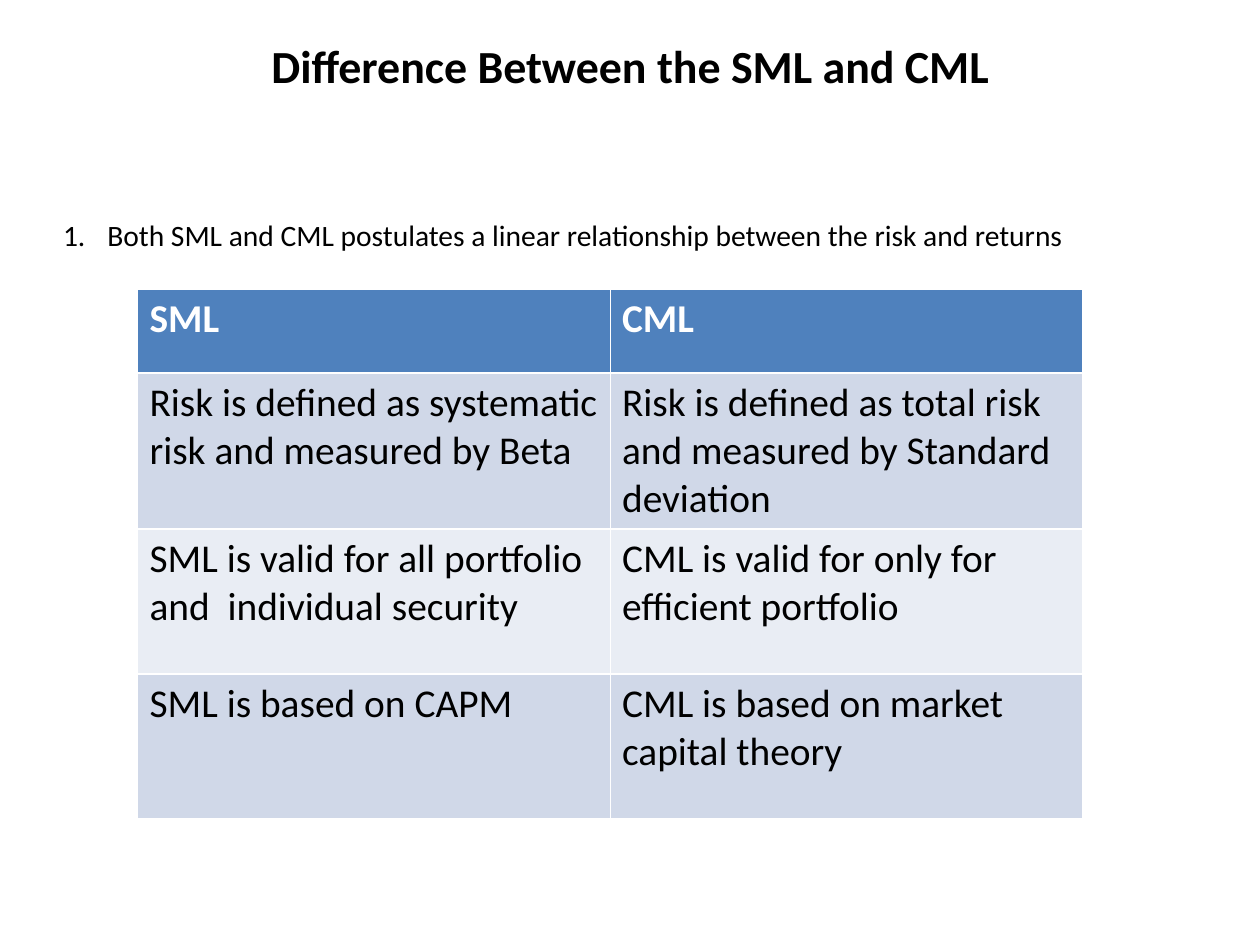
from pptx import Presentation
from pptx.dml.color import RGBColor as RGB
from pptx.enum.text import MSO_ANCHOR as Anchor, MSO_AUTO_SIZE as Auto, PP_ALIGN as Align
from pptx.oxml.ns import qn
from pptx.util import Pt
from lxml.etree import SubElement

HUES = {"text": "000000", "head": "4F81BD", "light": "FFFFFF",
        "odd": "D0D8E8", "even": "E9EDF4"}

ROWS = [
    ("SML", "CML"),
    ("Risk is defined as systematic risk and measured by Beta",
     "Risk is defined as total risk and measured by Standard deviation"),
    ("SML is valid for all portfolio and  individual security",
     "CML is valid for only for efficient portfolio"),
    ("SML is based on CAPM", "CML is based on market capital theory"),
]


def apply(item, form):
    for name, value in form.items():
        setattr(item, name, value)


class Deck:
    """Holds the style and the current slide."""

    face = "Calibri"
    frame = {"margin_left": 0, "margin_top": 0, "margin_right": 0, "margin_bottom": 0,
             "word_wrap": True, "auto_size": Auto.NONE, "vertical_anchor": Anchor.TOP}

    def __init__(self, wide, high):
        self.show = Presentation()
        apply(self.show, {"slide_width": Pt(wide), "slide_height": Pt(high)})
        self.slide = self.show.slides.add_slide(self.show.slide_layouts[1])

    def color(self, key):
        return RGB.from_string(HUES[key])

    def label(self, para, text, size, key="text", bold=False):
        run = para.add_run()
        run.text = text
        apply(run.font, {"name": self.face, "size": Pt(size), "bold": bold})
        run.font.color.rgb = self.color(key)

    def place(self, shape, left, top, width, height):
        """Move a placeholder and return its first paragraph."""
        apply(shape, {"left": Pt(left), "top": Pt(top),
                      "width": Pt(width), "height": Pt(height)})
        apply(shape.text_frame, self.frame)
        para = shape.text_frame.paragraphs[0]
        para.space_before = Pt(0)
        return para

    def title(self, text, *box):
        para = self.place(self.slide.shapes.title, *box)
        para.alignment = Align.CENTER
        self.label(para, text, 28, bold=True)

    def list(self, items, *box):
        """Fill the body with a numbered list."""
        shape = self.slide.placeholders[1]
        first = self.place(shape, *box)
        for i, text in enumerate(items):
            para = shape.text_frame.add_paragraph() if i else first
            props = para._p.get_or_add_pPr()
            props.set("marL", str(Pt(27)))
            props.set("indent", str(Pt(-27)))
            SubElement(props, qn("a:buFont")).set("typeface", "+mj-lt")
            SubElement(props, qn("a:buAutoNum")).set("type", "arabicPeriod")
            self.label(para, text, 18)

    def table(self, rows, left, top, width, heights):
        grid = self.slide.shapes.add_table(
            len(rows), len(rows[0]), Pt(left), Pt(top), Pt(width), Pt(sum(heights))).table
        for r, texts in enumerate(rows):
            grid.rows[r].height = Pt(heights[r])
            fill = "head" if r == 0 else "odd" if r % 2 else "even"
            for c, text in enumerate(texts):
                cell = grid.cell(r, c)
                cell.fill.solid()
                cell.fill.fore_color.rgb = self.color(fill)
                self.label(cell.text_frame.paragraphs[0], text, 24,
                           "text" if r else "light", r == 0)


def main():
    deck = Deck(768, 576)
    deck.title("Difference Between the SML and CML", 38.4, 23, 691.2, 34)
    deck.list(["Both SML and CML postulates a linear relationship between the risk and returns"],
              38.4, 132.5, 691.2, 44)
    deck.table(ROWS, 84, 176.4, 576, [51] + [88.4] * 3)
    deck.show.save("out.pptx")


if __name__ == "__main__":
    main()
